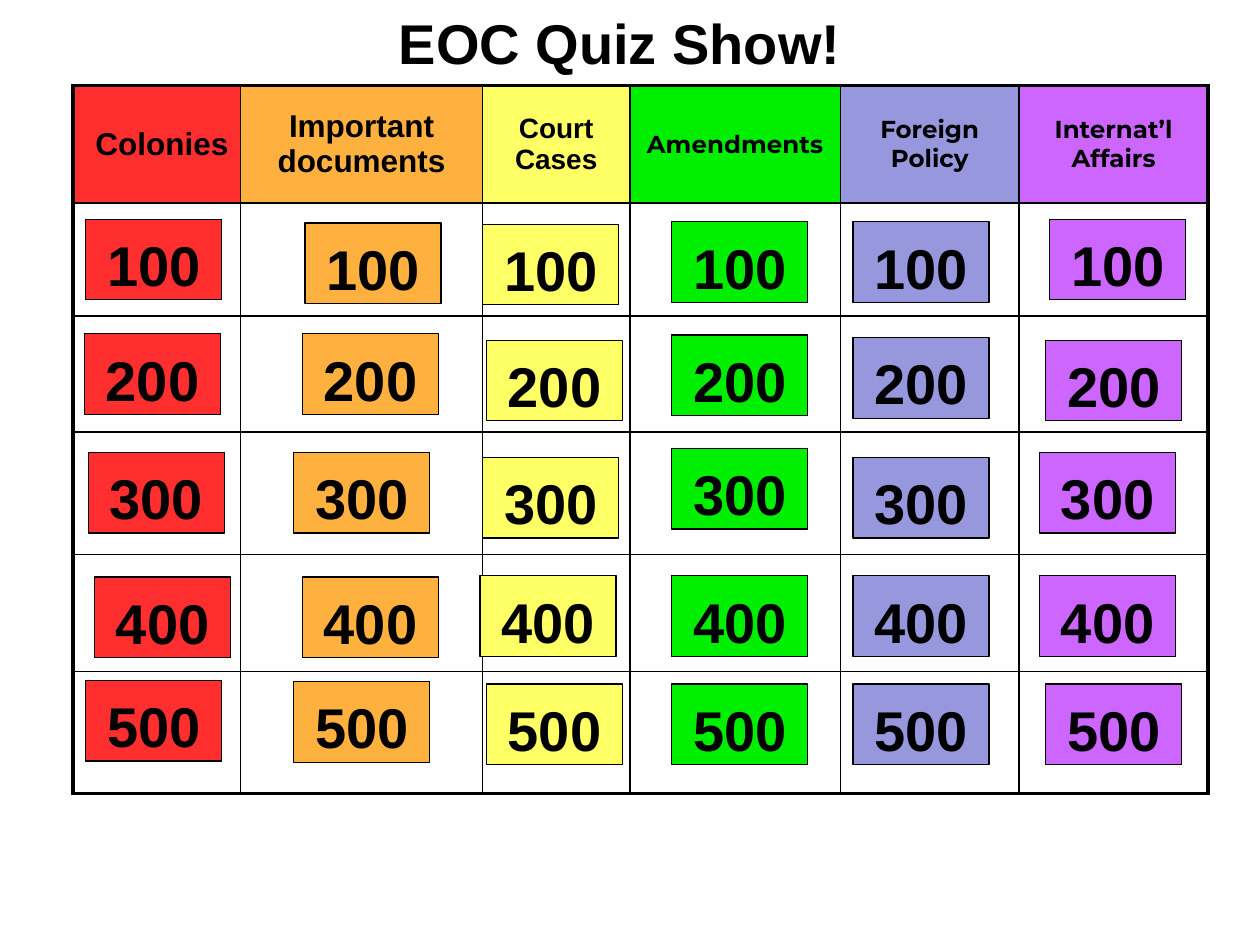
from lxml.etree import SubElement
from pptx import Presentation
from pptx.dml.color import RGBColor
from pptx.enum.shapes import MSO_SHAPE
from pptx.enum.text import MSO_ANCHOR, PP_ALIGN
from pptx.oxml.ns import qn
from pptx.util import Inches, Pt

# Category: heading, font, size, colour, then the (left, top) of its five cards
CATEGORIES = [
    ("Colonies", "Arial", 18, "FF2F2F",
     [(0.68, 1.74), (0.67, 2.65), (0.7, 3.59), (0.75, 4.58), (0.68, 5.4)]),
    ("Important documents", "Arial", 18, "FFB13F",
     [(2.42, 1.77), (2.4, 2.65), (2.33, 3.59), (2.4, 4.58), (2.33, 5.41)]),
    ("Court Cases", "Arial", 16, "FFFF66",
     [(3.83, 1.78), (3.86, 2.7), (3.83, 3.63), (3.81, 4.57), (3.86, 5.43)]),
    ("Amendments", "Montserrat", 14, "00EE00",
     [(5.33, 1.76), (5.33, 2.66), (5.33, 3.56), (5.33, 4.57), (5.33, 5.43)]),
    ("Foreign Policy", "Montserrat", 14, "9797DD",
     [(6.77, 1.76), (6.77, 2.68), (6.77, 3.63), (6.77, 4.57), (6.77, 5.43)]),
    ("Internat’l Affairs", "Montserrat", 14, "CC66FF",
     [(8.33, 1.74), (8.3, 2.7), (8.25, 3.59), (8.25, 4.57), (8.3, 5.43)]),
]
COLUMN_WIDTHS = [1.33, 1.92, 1.17, 1.67, 1.42, 1.5]
ROW_HEIGHTS = [0.93, 0.9, 0.92, 0.97, 0.93, 0.97]
BLACK = "000000"


def color(hex_string):
    return RGBColor.from_string(hex_string)


class Board:
    """Holds the style and the current slide."""

    font_name = "Arial"
    large_size = 32
    inner_border = 1
    outer_border = 2.25
    card_size = (1.08, 0.64)

    def __init__(self, slide):
        self.slide = slide

    def set_text(self, text_frame, text, size, font_name=None, alignment=PP_ALIGN.CENTER):
        text_frame.word_wrap = True
        paragraph = text_frame.paragraphs[0]
        paragraph.text = text
        paragraph.alignment = alignment
        paragraph.font.name = font_name or self.font_name
        paragraph.font.size = Pt(size)
        paragraph.font.bold = True
        paragraph.font.color.rgb = color(BLACK)

    def title(self, text, left, top, width, height):
        shape = self.slide.shapes.add_textbox(
            Inches(left), Inches(top), Inches(width), Inches(height))
        shape.text_frame.vertical_anchor = MSO_ANCHOR.MIDDLE
        self.set_text(shape.text_frame, text, self.large_size)

    def border(self, cell, side, width):
        line = SubElement(cell._tc.get_or_add_tcPr(), qn(f"a:{side}"), w=str(Pt(width)))
        fill = SubElement(line, qn("a:solidFill"))
        SubElement(fill, qn("a:srgbClr"), val=BLACK)

    def grid(self, left, top, widths, heights):
        table = self.slide.shapes.add_table(
            len(heights), len(widths), Inches(left), Inches(top),
            Inches(sum(widths)), Inches(sum(heights))).table
        table.first_row = table.horz_banding = False
        for column, width in zip(table.columns, widths):
            column.width = Inches(width)
        for row, height in zip(table.rows, heights):
            row.height = Inches(height)
        last_row, last_column = len(heights) - 1, len(widths) - 1
        for row in range(len(heights)):
            for column in range(len(widths)):
                cell = table.cell(row, column)
                edges = {"lnL": column == 0, "lnR": column == last_column,
                         "lnT": row == 0, "lnB": row == last_row}
                for side, is_outer in edges.items():
                    self.border(cell, side, self.outer_border if is_outer else self.inner_border)
                cell.fill.background()
        return table

    def heading(self, cell, text, font_name, size, fill):
        cell.fill.solid()
        cell.fill.fore_color.rgb = color(fill)
        cell.vertical_anchor = MSO_ANCHOR.MIDDLE
        self.set_text(cell.text_frame, text, size, font_name)

    def card(self, points, left, top, fill):
        width, height = self.card_size
        shape = self.slide.shapes.add_shape(
            MSO_SHAPE.RECTANGLE, Inches(left), Inches(top), Inches(width), Inches(height))
        shape.shadow.inherit = False
        shape.fill.solid()
        shape.fill.fore_color.rgb = color(fill)
        shape.line.color.rgb = color(BLACK)
        shape.line.width = Pt(0.75)
        text_frame = shape.text_frame
        text_frame.vertical_anchor = MSO_ANCHOR.TOP
        text_frame.margin_left = Inches(0.17)
        text_frame.margin_top = Inches(0.09)
        text_frame.margin_bottom = Inches(0.04)
        self.set_text(text_frame, str(points), self.large_size, alignment=PP_ALIGN.LEFT)


def main():
    presentation = Presentation()
    presentation.slide_width = Inches(10)
    presentation.slide_height = Inches(7.5)
    board = Board(presentation.slides.add_slide(presentation.slide_layouts[6]))

    # Grid with the category headings
    table = board.grid(0.58, 0.68, COLUMN_WIDTHS, ROW_HEIGHTS)
    for column, (text, font_name, size, fill, _) in enumerate(CATEGORIES):
        board.heading(table.cell(0, column), text, font_name, size, fill)

    # The first heading sits slightly right of centre
    table.cell(0, 0).margin_left = Inches(0.15)
    table.cell(0, 0).margin_right = Inches(0.07)

    # Title
    board.title("EOC Quiz Show!", 0.67, 0.17, 8.5, 0.33)

    # Point cards
    for *_, fill, positions in CATEGORIES:
        for number, (left, top) in enumerate(positions, start=1):
            board.card(number * 100, left, top, fill)

    presentation.save("out.pptx")


if __name__ == "__main__":
    main()
